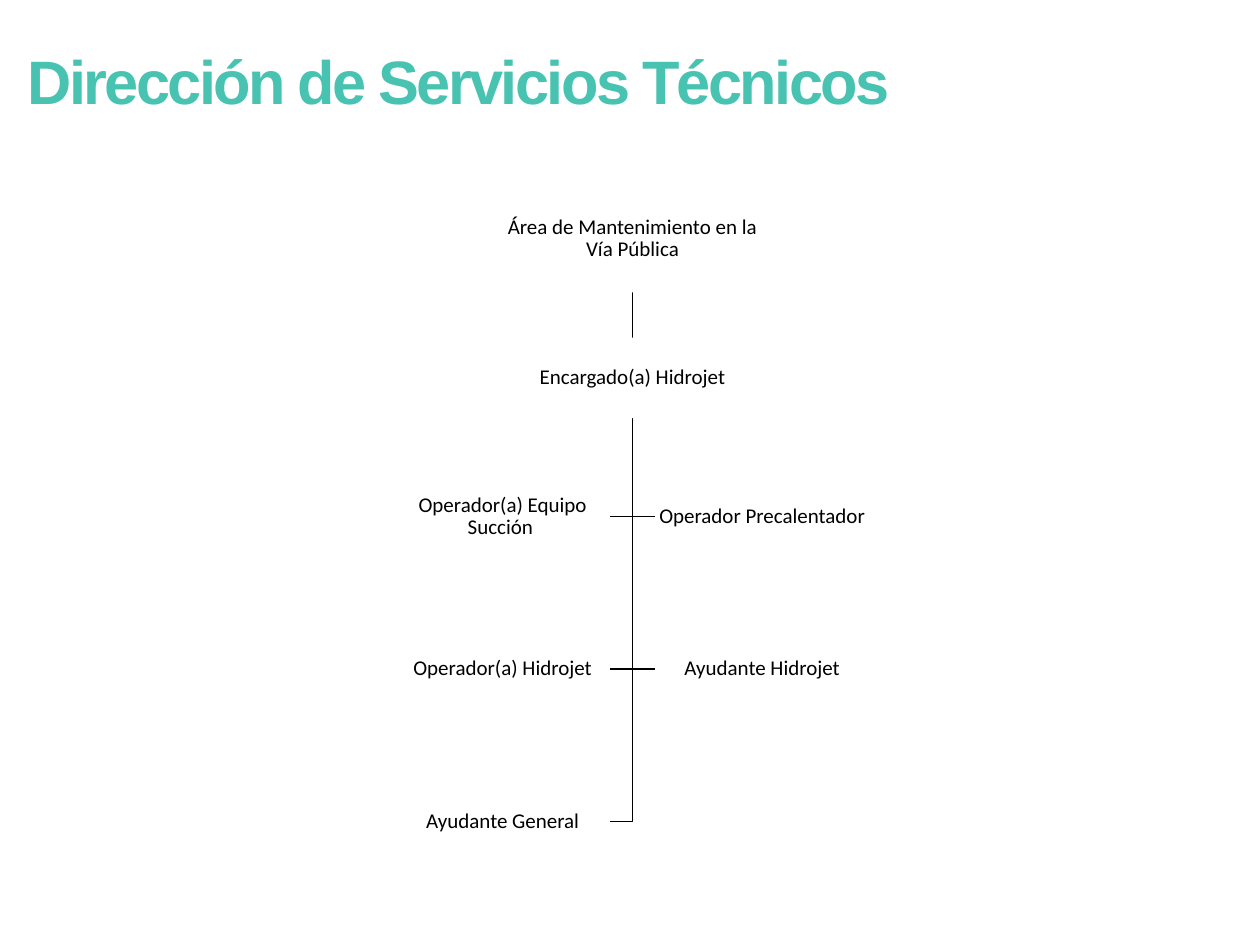
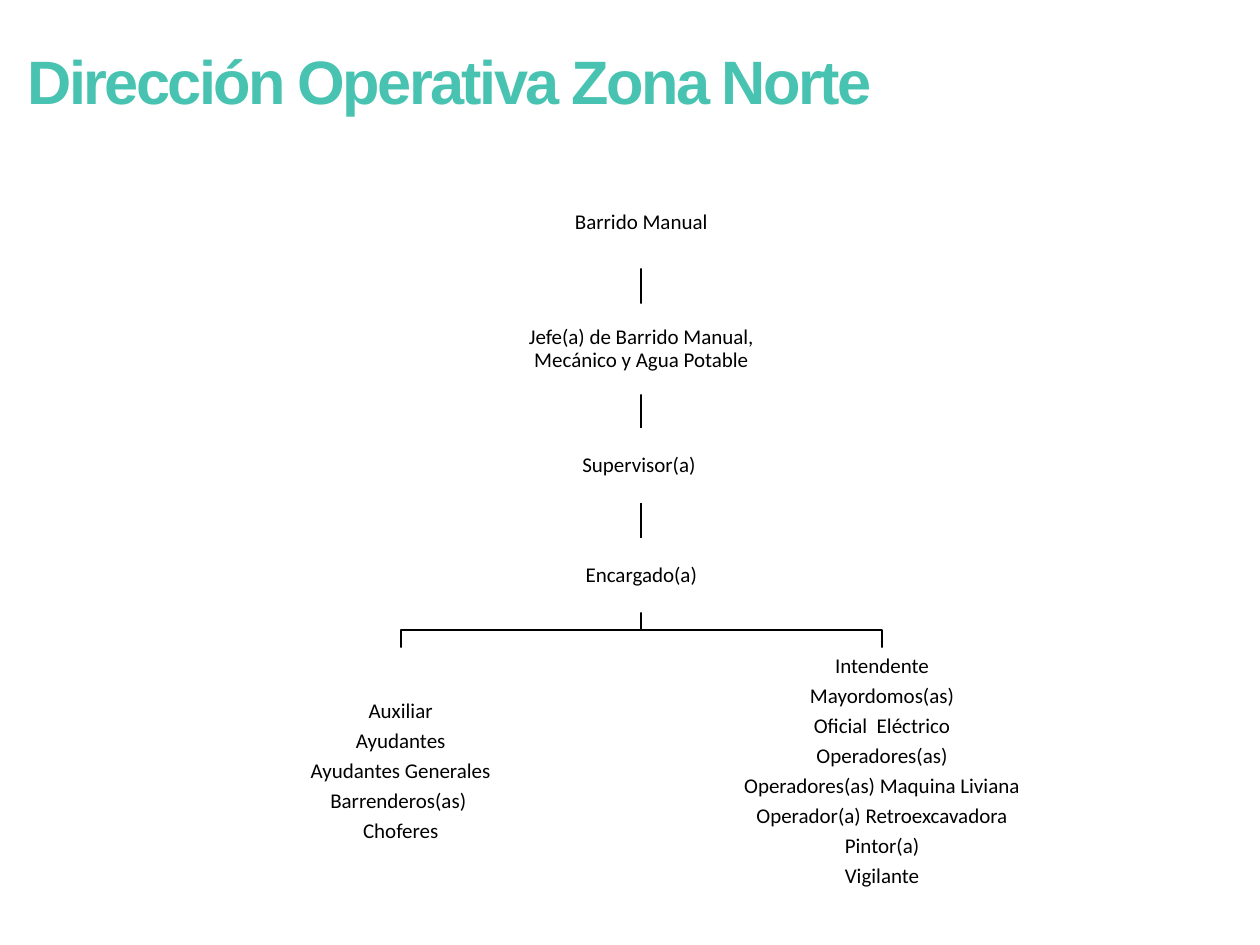
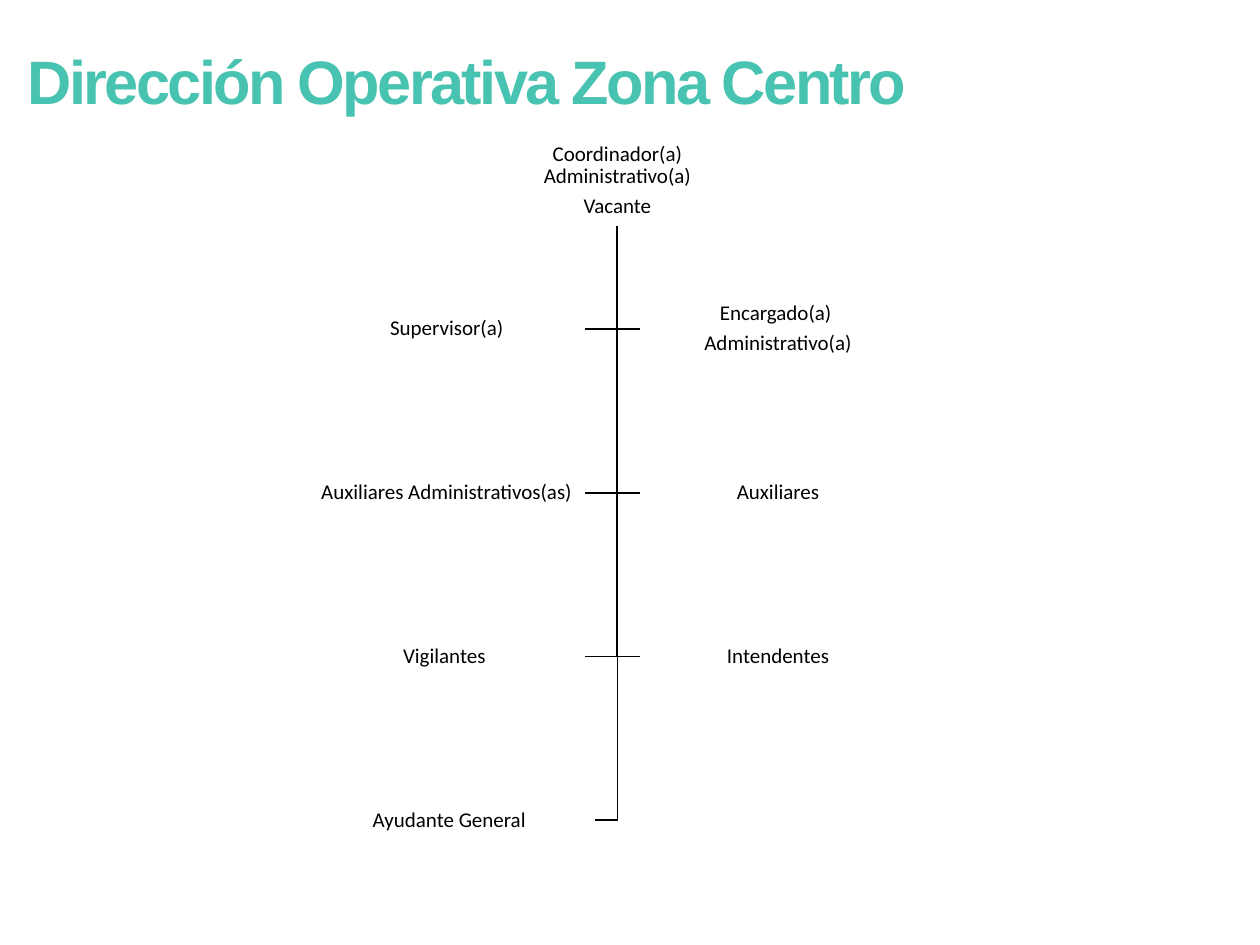
import pptx
import pptx.util
import pptx.dml.color
import pptx.enum.shapes
import pptx.enum.text
from pptx.util import Inches, Pt

TEAL = pptx.dml.color.RGBColor(0x49, 0xC3, 0xB1)
BLACK = pptx.dml.color.RGBColor(0, 0, 0)
WHITE = pptx.dml.color.RGBColor(255, 255, 255)

# chain: top, width, height, lines; side rows: left lines, right lines
CHARTS = [
    {
        "title": "Dirección de Servicios Técnicos",
        "axis": 5.02,
        "chain": [
            (1.47, 2.05, 0.85, ["Área de Mantenimiento en la Vía Pública"]),
            (2.68, 1.87, 0.64, ["Encargado(a) Hidrojet"]),
        ],
        "rows": {
            "middle": 4.1, "pitch": 1.21, "height": 0.85, "left": 3.14, "width": 1.7,
            "staff": [
                (["Operador(a) Equipo Succión "], ["Operador Precalentador"], 1.7),
                (["Operador(a) Hidrojet"], ["Ayudante Hidrojet"], 1.7),
                (["Ayudante General"], None, 1.7),
            ],
        },
    },
    {
        "title": "Dirección Operativa Zona Norte",
        "axis": 5.09,
        "chain": [
            (1.41, 1.74, 0.72, ["Barrido Manual"]),
            (2.41, 2.32, 0.72, ["Jefe(a) de Barrido Manual, Mecánico y Agua Potable"]),
            (3.4, 1.44, 0.59, ["Supervisor(a) "]),
            (4.27, 1.44, 0.59, ["Encargado(a)"]),
        ],
        "branches": {
            "top": 5.14, "width": 3.55, "height": 1.97, "offset": 1.91,
            "staff": [
                ["Auxiliar", "Ayudantes", "Ayudantes Generales", "Barrenderos(as) ", "Choferes"],
                ["Intendente", "Mayordomos(as)", "Oficial  Eléctrico", "Operadores(as)",
                 "Operadores(as) Maquina Liviana", "Operador(a) Retroexcavadora",
                 "Pintor(a)", "Vigilante"],
            ],
        },
    },
    {
        "title": "Dirección Operativa Zona Centro",
        "axis": 4.9,
        "chain": [(1.08, 2.19, 0.71, ["Coordinador(a) Administrativo(a)", "Vacante"])],
        "rows": {
            "middle": 2.61, "pitch": 1.3, "height": 0.94, "left": 2.45, "width": 2.19,
            "staff": [
                (["Supervisor(a)"], ["Encargado(a) ", "Administrativo(a)"], 2.19),
                (["Auxiliares Administrativos(as)"], ["Auxiliares"], 2.19),
                (["Vigilantes "], ["Intendentes"], 2.19),
                (["Ayudante General "], None, 2.27),
            ],
        },
    },
]
SIDE_GAP = 0.18


def add_title(page, text):
    box = page.shapes.add_textbox(Inches(0.12), Inches(0.29), Inches(8.23), Inches(0.69))
    frame = box.text_frame
    frame.word_wrap = True
    frame.auto_size = pptx.enum.text.MSO_AUTO_SIZE.SHAPE_TO_FIT_TEXT
    frame.text = text
    span = frame.paragraphs[0].runs[0]
    span.font.name = "Arial"
    span.font.size = Pt(35)
    span.font.bold = True
    span.font.color.rgb = TEAL
    span.font._element.set("spc", "-150")


def add_post(page, left, top, width, height, lines):
    box = page.shapes.add_shape(pptx.enum.shapes.MSO_SHAPE.RECTANGLE, Inches(left),
                                Inches(top), Inches(width), Inches(height))
    box.shadow.inherit = False
    box.fill.solid()
    box.fill.fore_color.rgb = WHITE
    box.line.fill.background()
    frame = box.text_frame
    frame.word_wrap = True
    frame.vertical_anchor = pptx.enum.text.MSO_ANCHOR.MIDDLE
    frame.margin_left = frame.margin_right = Inches(0.01)
    frame.margin_top = frame.margin_bottom = Inches(0.01)
    frame.text = "\n".join(lines)
    for para in frame.paragraphs:
        para.alignment = pptx.enum.text.PP_ALIGN.CENTER
        para.line_spacing = 0.9
        para.space_after = Pt(4.2)
        for span in para.runs:
            span.font.name = "Calibri"
            span.font.size = Pt(12)
            span.font.color.rgb = BLACK


def add_link(page, *points):
    start, *others = [(Inches(x), Inches(y)) for x, y in points]
    builder = page.shapes.build_freeform(*start)
    builder.add_line_segments(others, close=False)
    link = builder.convert_to_shape()
    link.shadow.inherit = False
    link.fill.background()
    link.line.color.rgb = BLACK
    link.line.width = Pt(1)


def place_rows(axis, start, rows):
    posts, links = [], []
    for index, (left_lines, right_lines, left_width) in enumerate(rows["staff"]):
        middle = rows["middle"] + index * rows["pitch"]
        sides = [(rows["left"], left_width, left_lines, rows["left"] + left_width)]
        if right_lines:
            right = axis + SIDE_GAP
            sides.append((right, rows["width"], right_lines, right))
        for left, width, lines, edge in sides:
            posts.append((left, middle - rows["height"] / 2, width, rows["height"], lines))
            links.append(((axis, start), (axis, middle), (edge, middle)))
    return posts, links


def place_branches(axis, start, branches):
    posts, links = [], []
    top, width = branches["top"], branches["width"]
    bend = (start + top) / 2
    for side, lines in zip((-1, 1), branches["staff"]):
        center = axis + side * branches["offset"]
        posts.append((center - width / 2, top, width, branches["height"], lines))
        links.append(((axis, start), (axis, bend), (center, bend), (center, top)))
    return posts, links


def add_chart_page(deck, chart):
    page = deck.slides.add_slide(deck.slide_layouts[6])
    add_title(page, chart["title"])
    axis, chain = chart["axis"], chart["chain"]
    start = chain[-1][0] + chain[-1][2]
    if "rows" in chart:
        posts, links = place_rows(axis, start, chart["rows"])
    else:
        posts, links = place_branches(axis, start, chart["branches"])
    for upper, lower in zip(chain, chain[1:]):
        links.append(((axis, upper[0] + upper[2]), (axis, lower[0])))
    for link in links:
        add_link(page, *link)
    for top, width, height, lines in chain:
        add_post(page, axis - width / 2, top, width, height, lines)
    for post in posts:
        add_post(page, *post)


def main():
    deck = pptx.Presentation()
    deck.slide_width, deck.slide_height = Inches(10), Inches(7.5)
    for chart in CHARTS:
        add_chart_page(deck, chart)
    deck.save("out.pptx")


if __name__ == "__main__":
    main()
